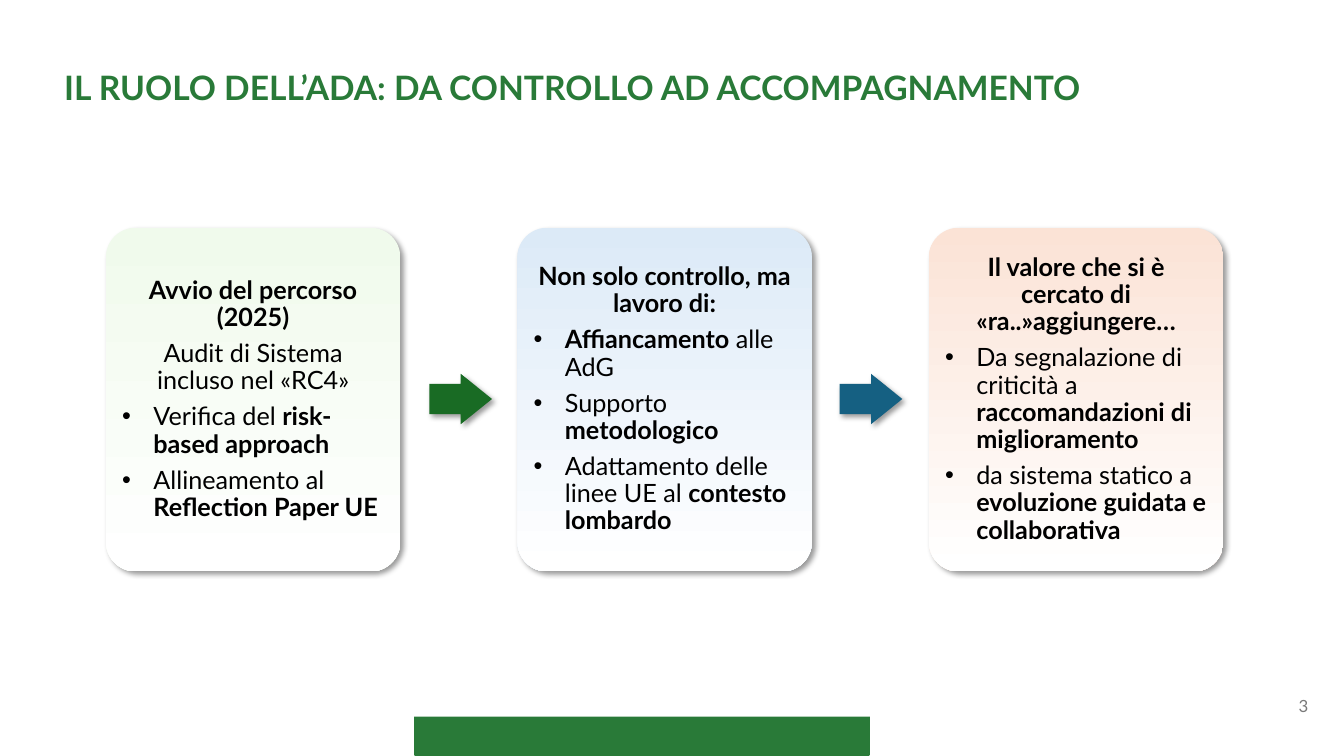
from dataclasses import dataclass

from lxml.etree import SubElement
from pptx import Presentation
from pptx.dml.color import RGBColor
from pptx.enum.shapes import MSO_SHAPE as Preset
from pptx.enum.text import MSO_ANCHOR as Anchor, PP_ALIGN as Align
from pptx.oxml.ns import qn
from pptx.util import Cm, Pt

FONT = "Lato"
COLORS = {
    "green": "297A38", "white": "FFFFFF", "black": "000000", "grey": "797979",
    "card_green": "F0FAEC", "card_blue": "DCEAF7", "card_orange": "FBE3D6",
    "arrow_green": "196B24", "arrow_blue": "156082",
}
CARD_LEFT, CARD_TOP, CARD_WIDTH, CARD_HEIGHT, CARD_PITCH = 2.67, 5.74, 7.42, 8.66, 10.37
ARROW_LEFT, ARROW_TOP, ARROW_WIDTH, ARROW_HEIGHT, ARROW_PITCH = 10.82, 9.42, 1.58, 1.27, 10.34
CARD_INSET = 0.19
BULLET_INDENT = 0.79


@dataclass
class Line:
    """A paragraph; text between asterisks is bold."""
    text: str
    bullet: bool = True


@dataclass
class Card:
    color: str
    lines: list[Line]


CARDS = [
    Card("card_green", [
        Line("*Avvio del percorso (2025)*", bullet=False),
        Line("Audit di Sistema incluso nel «RC4»", bullet=False),
        Line("Verifica del *risk-based approach*"),
        Line("Allineamento al *Reflection Paper UE*"),
    ]),
    Card("card_blue", [
        Line("*Non solo controllo, ma lavoro di:*", bullet=False),
        Line("*Affiancamento* alle AdG"),
        Line("Supporto *metodologico*"),
        Line("Adattamento delle linee UE al *contesto lombardo*"),
    ]),
    Card("card_orange", [
        Line("*Il valore che si è cercato di «ra..»aggiungere…*", bullet=False),
        Line("Da segnalazione di criticità a *raccomandazioni di miglioramento*"),
        Line("da sistema statico a *evoluzione guidata e collaborativa*"),
    ]),
]
ARROW_COLORS = ["arrow_green", "arrow_blue"]


def rgb(name: str) -> RGBColor:
    return RGBColor.from_string(COLORS[name])


def style_font(font, size: float, color: str, bold: bool = False) -> None:
    font.name, font.size, font.bold = FONT, Pt(size), bold
    font.color.rgb = rgb(color)


def add_shape(slide, preset, left: float, top: float, width: float, height: float):
    shape = slide.shapes.add_shape(preset, Cm(left), Cm(top), Cm(width), Cm(height))
    shape.shadow.inherit = False
    shape.line.fill.background()
    return shape


def fill_solid(shape, color: str) -> None:
    shape.fill.solid()
    shape.fill.fore_color.rgb = rgb(color)


def add_shadow(shape) -> None:
    effects = shape._element.spPr.find(qn("a:effectLst"))
    shadow = SubElement(effects, qn("a:outerShdw"), blurRad=str(Pt(4)), dist=str(Pt(3)),
                        dir="2700000", algn="tl", rotWithShape="0")
    color = SubElement(shadow, qn("a:srgbClr"), val=COLORS["black"])
    SubElement(color, qn("a:alpha"), val="40000")


def add_bullet(paragraph) -> None:
    properties = paragraph._p.get_or_add_pPr()
    properties.set("marL", str(Cm(BULLET_INDENT)))
    properties.set("indent", str(-Cm(BULLET_INDENT)))
    SubElement(properties, qn("a:buFont"), typeface="Arial")
    SubElement(properties, qn("a:buChar"), char="•")


def write_line(paragraph, line: Line) -> None:
    if line.bullet:
        add_bullet(paragraph)
    paragraph.alignment = Align.LEFT if line.bullet else Align.CENTER
    paragraph.line_spacing = 0.9
    paragraph.space_after = Pt(6.3)
    for index, part in enumerate(line.text.split("*")):
        if part:
            run = paragraph.add_run()
            run.text = part
            style_font(run.font, 18, "black", bold=index % 2 == 1)


def add_card(slide, card: Card, left: float) -> None:
    shape = add_shape(slide, Preset.ROUNDED_RECTANGLE, left, CARD_TOP, CARD_WIDTH, CARD_HEIGHT)
    shape.adjustments[0] = 0.1
    shape.fill.gradient()
    shape.fill.gradient_angle = 270
    for stop, color in zip(shape.fill.gradient_stops, (card.color, "white")):
        stop.color.rgb = rgb(color)
    add_shadow(shape)
    frame = shape.text_frame
    frame.word_wrap = True
    frame.vertical_anchor = Anchor.MIDDLE
    frame.margin_left = frame.margin_right = Cm(CARD_INSET)
    frame.margin_top = frame.margin_bottom = Cm(CARD_INSET)
    for index, line in enumerate(card.lines):
        write_line(frame.add_paragraph() if index else frame.paragraphs[0], line)


def add_arrow(slide, color: str, left: float) -> None:
    shape = add_shape(slide, Preset.RIGHT_ARROW, left, ARROW_TOP, ARROW_WIDTH, ARROW_HEIGHT)
    shape.adjustments[0] = 0.6
    shape.adjustments[1] = 0.62
    fill_solid(shape, color)
    add_shadow(shape)


def add_text(slide, text: str, left: float, top: float, width: float, height: float,
             size: float, color: str, bold: bool, align, anchor) -> None:
    frame = slide.shapes.add_textbox(Cm(left), Cm(top), Cm(width), Cm(height)).text_frame
    frame.word_wrap = True
    frame.vertical_anchor = anchor
    frame.text = text
    paragraph = frame.paragraphs[0]
    paragraph.alignment = align
    style_font(paragraph.runs[0].font, size, color, bold)


def main() -> None:
    presentation = Presentation()
    presentation.slide_width, presentation.slide_height = Cm(33.87), Cm(19.05)
    slide = presentation.slides.add_slide(presentation.slide_layouts[6])

    # Green footer bar, partly covered by the white page panel
    bar = add_shape(slide, Preset.RECTANGLE, 10.46, 18.01, 11.43, 1.02)
    fill_solid(bar, "green")
    bar.line.color.rgb = rgb("green")
    bar.line.width = Pt(1.5)
    panel = add_shape(slide, Preset.RECTANGLE, 0.66, 0.66, 32.61, 17.4)
    fill_solid(panel, "white")

    # Title and page number
    add_text(slide, "IL RUOLO DELL’ADA: DA CONTROLLO AD ACCOMPAGNAMENTO",
             1.37, 1.55, 30.71, 1.27, 24, "green", True, Align.LEFT, Anchor.TOP)
    add_text(slide, "3", 25.6, 17.27, 7.62, 1.02, 12, "grey", False, Align.RIGHT, Anchor.MIDDLE)

    # Three steps joined by arrows
    for index, card in enumerate(CARDS):
        add_card(slide, card, CARD_LEFT + index * CARD_PITCH)
    for index, color in enumerate(ARROW_COLORS):
        add_arrow(slide, color, ARROW_LEFT + index * ARROW_PITCH)

    presentation.save("out.pptx")


if __name__ == "__main__":
    main()
